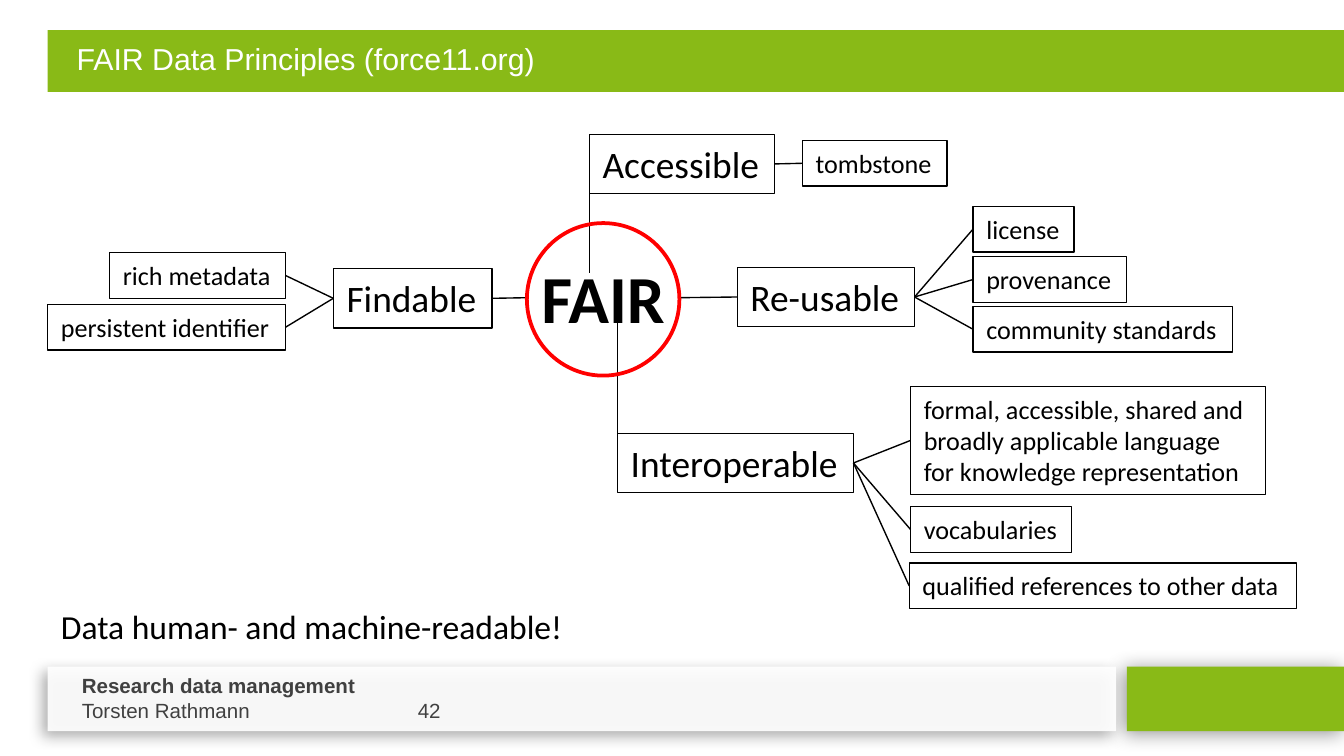
import pptx
import pptx.util
import pptx.dml.color
import pptx.enum.shapes
import pptx.enum.text
import pptx.oxml.ns
from lxml import etree

COLUMNS, ROWS = 100, 56.25
CELL = pptx.util.Inches(0.1)
COLOURS = {
    "green": "89BA17",
    "white": "FFFFFF",
    "grey": "404040",
    "black": "000000",
    "red": "FF0000",
}
TOP, LEFT, BOTTOM, RIGHT = range(4)
BRANCH_HEIGHT, LEAF_HEIGHT = 4.4, 3.4
LINE_WIDTH = 0.75

# Each branch: name, left, top, width, side its leaves hang on, leaves
# Each leaf: lines of text, left, top, width, height
BRANCHES = [
    ("Findable", 24.8, 20, 11.8, LEFT, [
        ("rich metadata", 8.15, 18.8, 13.1, LEAF_HEIGHT),
        ("persistent identifier", 3.55, 22.65, 17.7, LEAF_HEIGHT),
    ]),
    ("Accessible", 43.85, 10, 13.8, RIGHT, [
        ("tombstone", 59.7, 10.45, 10.75, LEAF_HEIGHT),
    ]),
    ("Interoperable", 45.95, 32.25, 17.55, RIGHT, [
        ("formal, accessible, shared and\nbroadly applicable language\n"
         "for knowledge representation", 67.75, 28.75, 26.4, 8.05),
        ("vocabularies", 67.75, 37.7, 12, LEAF_HEIGHT),
        ("qualified references to other data", 67.65, 41.9, 28.8, LEAF_HEIGHT),
    ]),
    ("Re-usable", 54.85, 19.9, 13.2, RIGHT, [
        ("license", 72.4, 15.35, 7.5, LEAF_HEIGHT),
        ("provenance", 72.4, 19.1, 11.4, LEAF_HEIGHT),
        ("community standards", 72.4, 22.8, 19.3, LEAF_HEIGHT),
    ]),
]


def cells(*counts):
    return [round(count * CELL) for count in counts]


def colour(name):
    return pptx.dml.color.RGBColor.from_string(COLOURS[name])


def add_outline(shape, name, width):
    shape.line.color.rgb = colour(name)
    shape.line.width = pptx.util.Pt(width)


def add_shadow(shape, opacity, blur, distance, angle):
    """Cast an outer black shadow; opacity in percent, lengths in points."""
    shape.shadow.inherit = False
    effects = shape._element.spPr.find(pptx.oxml.ns.qn("a:effectLst"))
    shadow = etree.SubElement(
        effects, pptx.oxml.ns.qn("a:outerShdw"),
        blurRad=str(pptx.util.Pt(blur)), dist=str(pptx.util.Pt(distance)),
        dir=str(angle * 60000), algn="ctr", rotWithShape="0")
    black = etree.SubElement(shadow, pptx.oxml.ns.qn("a:srgbClr"), val=COLOURS["black"])
    etree.SubElement(black, pptx.oxml.ns.qn("a:alpha"), val=str(opacity * 1000))


def add_bar(slide, area, fill):
    bar = slide.shapes.add_shape(pptx.enum.shapes.MSO_SHAPE.RECTANGLE, *cells(*area))
    bar.shadow.inherit = False
    bar.fill.solid()
    bar.fill.fore_color.rgb = colour(fill)
    bar.line.fill.background()
    return bar


def add_text(slide, area, text, size, font="Calibri", ink="black", bold=False, wrap=False):
    box = slide.shapes.add_textbox(*cells(*area))
    frame = box.text_frame
    frame.text = text
    frame.word_wrap = wrap
    frame.auto_size = (pptx.enum.text.MSO_AUTO_SIZE.NONE if wrap
                       else pptx.enum.text.MSO_AUTO_SIZE.SHAPE_TO_FIT_TEXT)
    for paragraph in frame.paragraphs:
        for run in paragraph.runs:
            run.font.name = font
            run.font.size = pptx.util.Pt(size)
            run.font.bold = bold
            run.font.color.rgb = colour(ink)
    return box


def add_node(slide, area, text, size):
    node = add_text(slide, area, text, size)
    add_outline(node, "black", LINE_WIDTH)
    return node


def add_line(slide, start=(0, 0), end=(0, 0)):
    line = slide.shapes.add_connector(
        pptx.enum.shapes.MSO_CONNECTOR.STRAIGHT, *cells(*start, *end))
    add_outline(line, "black", LINE_WIDTH)
    etree.SubElement(line._element.spPr, pptx.oxml.ns.qn("a:effectLst"))
    return line


def join(slide, first, first_side, second, second_side):
    line = add_line(slide)
    line.begin_connect(first, first_side)
    line.end_connect(second, second_side)


def add_header(slide):
    add_bar(slide, (3.55, 2.25, COLUMNS - 3.1, 4.6), "green")
    title = add_text(slide, (3.5, 2.2, COLUMNS - 3.1, 3.5),
                     "FAIR Data Principles (force11.org)", 16.2, "Arial", "white", wrap=True)
    title.text_frame.margin_left = pptx.util.Inches(0.22)
    title.text_frame.margin_top = pptx.util.Inches(0.08)


def add_footer(slide):
    top, height = ROWS - 6.65, 4.8
    corner = add_bar(slide, (83.85, top, COLUMNS - 83.85, height), "green")
    add_shadow(corner, 42, 10.8, 2, 142)
    strip = add_bar(slide, (3.55, top, 79.5, height), "white")
    strip_colour = strip._element.spPr.find(".//" + pptx.oxml.ns.qn("a:srgbClr"))
    etree.SubElement(strip_colour, pptx.oxml.ns.qn("a:alpha"), val="91000")
    add_shadow(strip, 34, 7.5, 4, 145)

    imprint = add_text(slide, (5.1, top, 59.8, 4.7),
                       "Research data management\nTorsten Rathmann\t42",
                       11, "Arial", "grey", wrap=True)
    course, author = imprint.text_frame.paragraphs
    course.runs[0].font.bold = True
    tabs = etree.SubElement(author._p.get_or_add_pPr(), pptx.oxml.ns.qn("a:tabLst"))
    etree.SubElement(tabs, pptx.oxml.ns.qn("a:tab"),
                     pos=str(pptx.util.Inches(2.5)), algn="l")


def add_mind_map(slide):
    hub = add_text(slide, (39.3, 18.6, 11.3, 7.1), "FAIR", 36, bold=True)
    branches = {}
    for name, left, top, width, leaf_side, leaves in BRANCHES:
        branch = add_node(slide, (left, top, width, BRANCH_HEIGHT), name, 20)
        branches[name] = branch
        for text, *area in leaves:
            leaf = add_node(slide, area, text, 14)
            join(slide, branch, leaf_side, leaf, LEFT if leaf_side == RIGHT else RIGHT)

    join(slide, branches["Findable"], RIGHT, hub, LEFT)
    join(slide, hub, RIGHT, branches["Re-usable"], LEFT)
    add_line(slide, (43.85, 13.7), (43.85, 20.3))
    add_line(slide, (45.95, 24), (45.95, 32.25))

    ring = slide.shapes.add_shape(
        pptx.enum.shapes.MSO_SHAPE.OVAL, *cells(39.2, 16.6, 11.35, 11.35))
    ring.shadow.inherit = False
    ring.fill.background()
    add_outline(ring, "red", 2)


def main():
    deck = pptx.Presentation()
    deck.slide_width, deck.slide_height = cells(COLUMNS, ROWS)
    slide = deck.slides.add_slide(deck.slide_layouts[6])
    add_footer(slide)
    add_header(slide)
    add_text(slide, (3.55, 44.6, 39.8, 4), "Data human- and machine-readable!", 18)
    add_mind_map(slide)
    deck.save("out.pptx")


if __name__ == "__main__":
    main()
